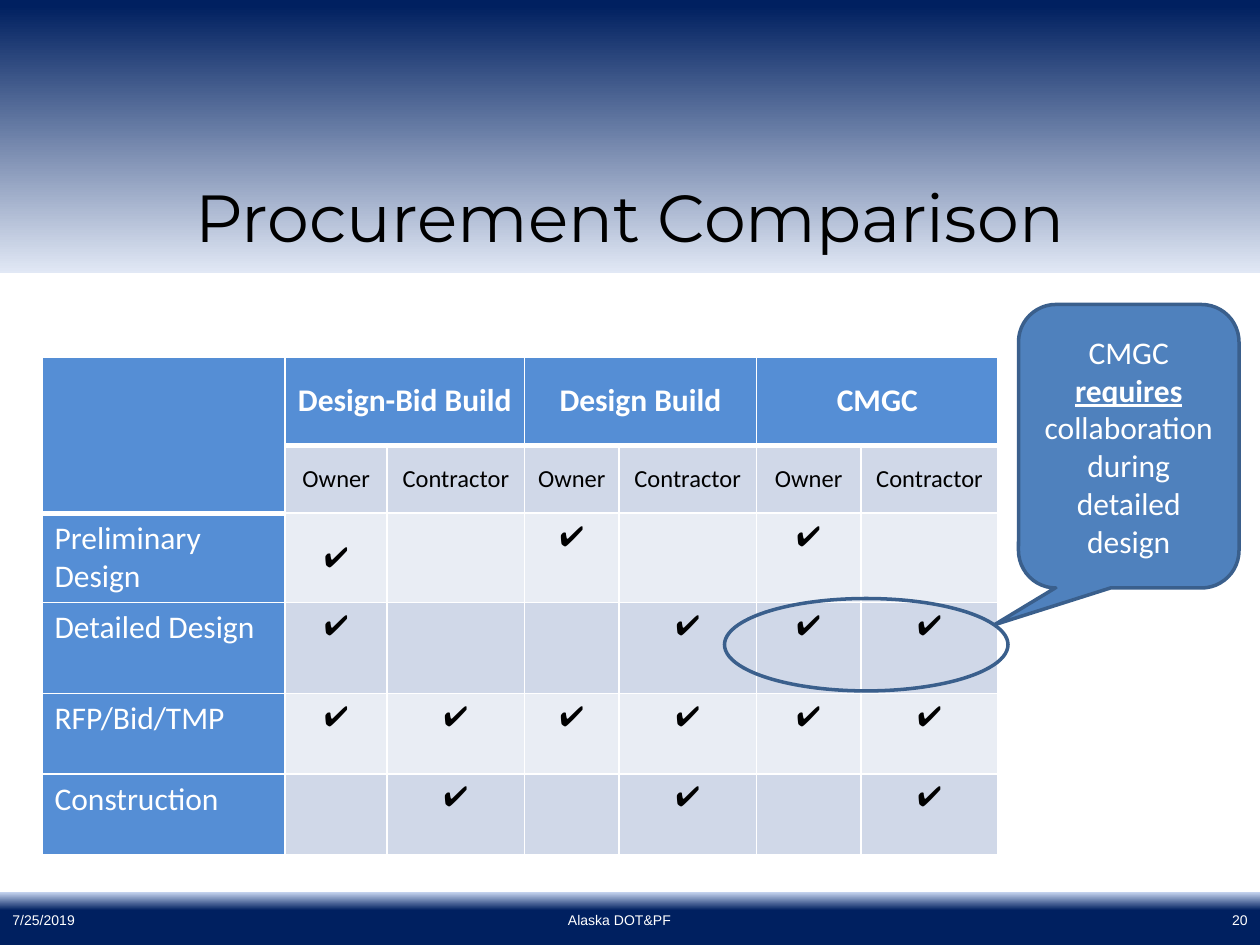
import pptx
import pptx.dml.color
import pptx.enum.shapes
import pptx.enum.text
import pptx.oxml
import pptx.oxml.ns
import pptx.util

RGBColor = pptx.dml.color.RGBColor
ALIGN = pptx.enum.text.PP_ALIGN
ANCHOR = pptx.enum.text.MSO_ANCHOR
SHAPE = pptx.enum.shapes.MSO_SHAPE

WHITE = RGBColor(0xFF, 0xFF, 0xFF)
BLACK = RGBColor(0, 0, 0)
NAVY = RGBColor(0x00, 0x20, 0x60)
PALE = RGBColor(0xE1, 0xE8, 0xF5)
SKY = RGBColor(0xC2, 0xD1, 0xED)
HEADER = RGBColor(0x55, 0x8E, 0xD5)
BAND_DARK = RGBColor(0xD0, 0xD8, 0xE8)
BAND_LIGHT = RGBColor(0xE9, 0xED, 0xF4)
CALLOUT = RGBColor(0x4F, 0x81, 0xBD)
OUTLINE = RGBColor(0x3A, 0x5F, 0x8C)

GRID_COLUMNS, GRID_ROWS = 120, 90
CHECK = "✔️"
FOOTER = {"name": "Arial", "size": pptx.util.Pt(8), "color": WHITE}
TITLE = {"name": "Montserrat", "size": pptx.util.Pt(38), "color": BLACK}
BODY = {"name": "Calibri", "size": pptx.util.Pt(18), "color": WHITE, "bold": False}
HEADING = {**BODY, "bold": True}
ROLE = {**BODY, "size": pptx.util.Pt(14), "color": BLACK}
MARK = {**ROLE, "size": pptx.util.Pt(16)}

METHODS = ["Design-Bid Build", "Design Build", "CMGC"]
ROLES = ["Owner", "Contractor"]
PHASES = [
    ("Preliminary Design", "101010"),
    ("Detailed Design", "100111"),
    ("RFP/Bid/TMP", "111111"),
    ("Construction", "010101"),
]
COLUMN_WIDTHS = [1.93, 0.81, 1.09, 0.75, 1.09, 0.83, 1.09]
ROW_HEIGHTS = [0.7, 0.54, 0.71, 0.72, 0.64, 0.64]


class SlideBuilder:
    def __init__(self, presentation):
        self.width = presentation.slide_width
        self.height = presentation.slide_height
        self.slide = presentation.slides.add_slide(presentation.slide_layouts[6])

    def place(self, left, top, width, height):
        column = self.width / GRID_COLUMNS
        row = self.height / GRID_ROWS
        return [round(value) for value in
                (left * column, top * row, width * column, height * row)]

    def add_runs(self, frame, runs, align):
        paragraph = frame.paragraphs[0]
        paragraph.alignment = align
        for text, style in runs:
            run = paragraph.add_run()
            run.text = text
            for name, value in style.items():
                if name == "color":
                    run.font.color.rgb = value
                else:
                    setattr(run.font, name, value)

    def text(self, box, text, style, align):
        frame = self.slide.shapes.add_textbox(*self.place(*box)).text_frame
        frame.word_wrap = True
        frame.vertical_anchor = ANCHOR.MIDDLE
        self.add_runs(frame, [(text, style)], align)

    def shape(self, kind, box, fill=None, line=None):
        shape = self.slide.shapes.add_shape(kind, *self.place(*box))
        shape.shadow.inherit = False
        if fill is None:
            shape.fill.background()
        else:
            shape.fill.solid()
            shape.fill.fore_color.rgb = fill
        if line is None:
            shape.line.fill.background()
        else:
            shape.line.color.rgb = line
            shape.line.width = pptx.util.Pt(2)
        return shape

    def gradient(self, box, stops):
        fill = self.shape(SHAPE.RECTANGLE, box).fill
        fill.gradient()
        fill.gradient_angle = 270
        for stop, (position, color) in zip(fill.gradient_stops, stops):
            stop.position = position
            stop.color.rgb = color

    def callout(self, box, adjustments, runs):
        shape = self.shape(SHAPE.ROUNDED_RECTANGULAR_CALLOUT, box, CALLOUT, OUTLINE)
        for index, value in enumerate(adjustments):
            shape.adjustments[index] = value
        shape.text_frame.word_wrap = True
        shape.text_frame.vertical_anchor = ANCHOR.MIDDLE
        self.add_runs(shape.text_frame, runs, ALIGN.CENTER)

    def table(self, left, top, widths, heights):
        box = self.place(left, top, sum(widths) * 12, sum(heights) * 12)
        frame = self.slide.shapes.add_table(len(heights), len(widths), *box)
        table = frame.table
        table.first_row = table.horz_banding = False
        for column, width in zip(table.columns, widths):
            column.width = pptx.util.Inches(width)
        for row, height in zip(table.rows, heights):
            row.height = pptx.util.Inches(height)
        return table

    def cell(self, cell, fill, bottom=1):
        properties = cell._tc.get_or_add_tcPr()
        for side, points in (("L", 1), ("R", 1), ("T", 1), ("B", bottom)):
            properties.append(pptx.oxml.parse_xml(
                f'<a:ln{side} {pptx.oxml.ns.nsdecls("a")} w="{pptx.util.Pt(points)}">'
                f'<a:solidFill><a:srgbClr val="{WHITE}"/></a:solidFill></a:ln{side}>'))
        cell.fill.solid()
        cell.fill.fore_color.rgb = fill

    def cell_text(self, cell, text, style, align=ALIGN.CENTER, anchor=ANCHOR.MIDDLE):
        cell.vertical_anchor = anchor
        if align == ALIGN.CENTER:
            cell.margin_left = cell.margin_right = pptx.util.Inches(0.08)
        self.add_runs(cell.text_frame, [(text, style)], align)


def add_comparison(builder):
    table = builder.table(4, 34, COLUMN_WIDTHS, ROW_HEIGHTS)
    for row in range(len(ROW_HEIGHTS)):
        band = BAND_DARK if row % 2 else BAND_LIGHT
        for column in range(len(COLUMN_WIDTHS)):
            is_header = row == 0 or column == 0
            is_heavy = row == 0 or (row, column) == (1, 0)
            builder.cell(table.cell(row, column), HEADER if is_header else band,
                         3 if is_heavy else 1)
    table.cell(0, 0).merge(table.cell(1, 0))
    for index, method in enumerate(METHODS):
        first = 1 + index * len(ROLES)
        table.cell(0, first).merge(table.cell(0, first + 1))
        builder.cell_text(table.cell(0, first), method, HEADING)
        for offset, role in enumerate(ROLES):
            builder.cell_text(table.cell(1, first + offset), role, ROLE)
    for row, (phase, marks) in enumerate(PHASES, 2):
        builder.cell_text(table.cell(row, 0), phase, BODY, ALIGN.LEFT, ANCHOR.TOP)
        for column, mark in enumerate(marks, 1):
            if mark == "1":
                anchor = ANCHOR.MIDDLE if (row, column) == (2, 1) else ANCHOR.TOP
                builder.cell_text(table.cell(row, column), CHECK, MARK, anchor=anchor)


def main():
    presentation = pptx.Presentation()
    presentation.slide_width = pptx.util.Inches(10)
    presentation.slide_height = pptx.util.Inches(7.5)
    builder = SlideBuilder(presentation)
    builder.gradient((0, 85, 120, 5), [(0, SKY), (0.34, NAVY)])
    builder.gradient((0, 0, 120, 26), [(0.02, NAVY), (1, PALE)])
    for left, width, text, align in (
        (0, 28, "7/25/2019", ALIGN.LEFT),
        (40, 38, "Alaska DOT&PF", ALIGN.CENTER),
        (92, 28, "20", ALIGN.RIGHT),
    ):
        builder.text((left, 85.2, width, 4.8), text, FOOTER, align)
    builder.text((0, 15.2, 120, 10.8), "Procurement Comparison", TITLE, ALIGN.CENTER)
    add_comparison(builder)
    builder.shape(SHAPE.OVAL, (69, 57, 27, 8.8), line=OUTLINE)
    builder.callout((97, 29, 21, 27), (-0.61, 0.63, 0.17), [
        ("CMGC ", BODY),
        ("requires ", {**HEADING, "underline": True}),
        ("collaboration during detailed design", BODY),
    ])
    presentation.save("out.pptx")


if __name__ == "__main__":
    main()
